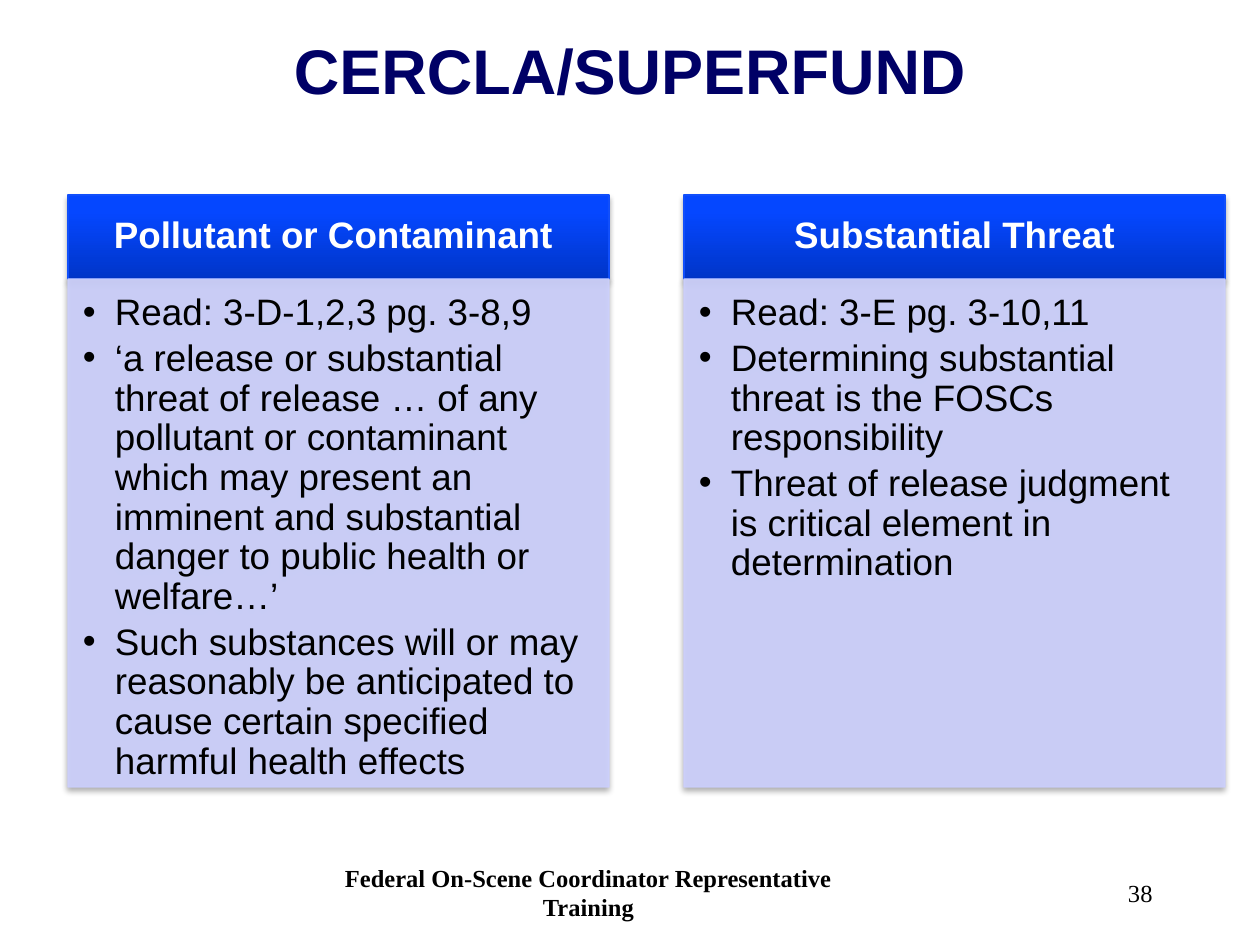
from copy import deepcopy
from dataclasses import dataclass
from typing import Any

from lxml.etree import SubElement
from pptx import Presentation
from pptx.dml.color import RGBColor
from pptx.enum.shapes import MSO_SHAPE
from pptx.enum.text import MSO_ANCHOR, PP_ALIGN
from pptx.oxml.ns import qn
from pptx.util import Emu, Pt

DPI = 126
TOP, WIDE, HEAD, BODY = 195, 541, 84, 508


@dataclass
class Box:
    left: int
    top: int
    width: int
    height: int


@dataclass
class Panel:
    left: int
    head: str
    points: list[str]


PANELS = [
    Panel(68, "Pollutant or Contaminant ", [
        "Read: 3-D-1,2,3 pg. 3-8,9",
        "‘a release or substantial threat of release … of any pollutant or "
        "contaminant which may present an imminent and substantial danger "
        "to public health or welfare…’",
        "Such substances will or may reasonably be anticipated to cause "
        "certain specified harmful health effects",
    ]),
    Panel(684, "Substantial Threat", [
        "Read: 3-E pg. 3-10,11",
        "Determining substantial threat is the FOSCs responsibility",
        "Threat of release judgment is critical element in determination",
    ]),
]


def px(count: int) -> Emu:
    """Turn pixels into EMU."""
    return Emu(round(count * 914400 / DPI))


def rgb(code: str) -> RGBColor:
    """Turn a hex string into a colour."""
    return RGBColor.from_string(code)


def area(box: Box) -> tuple[Emu, Emu, Emu, Emu]:
    """Give a box's place and size in EMU."""
    return px(box.left), px(box.top), px(box.width), px(box.height)


def style(para: Any, size: int, color: str, bold: bool = False,
          face: str = "Arial", align: PP_ALIGN = PP_ALIGN.CENTER) -> None:
    """Format a paragraph and its runs."""
    para.alignment = align
    for run in para.runs:
        font = run.font
        font.name, font.size, font.bold = face, Pt(size), bold
        font.color.rgb = rgb(color)


def inset(frame: Any, left: int, top: int, right: int, base: int) -> None:
    """Set the margins of a text frame."""
    frame.margin_left, frame.margin_top = px(left), px(top)
    frame.margin_right, frame.margin_bottom = px(right), px(base)


def shade(shape: Any) -> None:
    """Give a shape a soft shadow below it."""
    shape.shadow.inherit = False
    effect = shape._element.spPr.find(qn("a:effectLst"))
    outer = SubElement(effect, qn("a:outerShdw"), blurRad=str(Pt(3.1)),
                       dist=str(Pt(1.8)), dir="5400000", rotWithShape="0")
    tint = SubElement(outer, qn("a:srgbClr"), val="000000")
    SubElement(tint, qn("a:alpha"), val="35000")


def block(slide: Any, box: Box, edge: str) -> Any:
    """Draw a shadowed rectangle with a thin edge."""
    shape = slide.shapes.add_shape(MSO_SHAPE.RECTANGLE, *area(box))
    shape.line.color.rgb = rgb(edge)
    shape.line.width = Pt(0.75)
    shade(shape)
    shape.text_frame.word_wrap = True
    return shape


def draw_head(slide: Any, panel: Panel) -> None:
    """Draw the heading bar of a panel."""
    shape = block(slide, Box(panel.left, TOP, WIDE, HEAD), "114FFB")
    shape.fill.gradient()
    shape.fill.gradient_angle = 90
    stops = shape._element.spPr.find(qn("a:gradFill")).find(qn("a:gsLst"))
    stops.append(deepcopy(stops[-1]))
    tints = [(0, "0035C8"), (0.8, "0547FF"), (1, "0648FF")]
    for stop, (place, color) in zip(shape.fill.gradient_stops, tints):
        stop.position = place
        stop.color.rgb = rgb(color)
    frame = shape.text_frame
    frame.text = panel.head
    frame.vertical_anchor = MSO_ANCHOR.MIDDLE
    inset(frame, 20, 11, 20, 11)
    frame.paragraphs[0].line_spacing = 0.9
    style(frame.paragraphs[0], 21, "FFFFFF", True)


def draw_body(slide: Any, panel: Panel) -> None:
    """Draw the bullet list of a panel."""
    shape = block(slide, Box(panel.left, TOP + HEAD, WIDE, BODY), "CCD0FD")
    shape.fill.solid()
    shape.fill.fore_color.rgb = rgb("CCD0FD")
    for tint in shape._element.spPr.findall(".//" + qn("a:solidFill")):
        SubElement(tint[0], qn("a:alpha"), val="90000")
    frame = shape.text_frame
    frame.text = "\n".join(panel.points)
    frame.vertical_anchor = MSO_ANCHOR.TOP
    inset(frame, 15, 15, 20, 23)
    for para in frame.paragraphs:
        props = para._p.get_or_add_pPr()
        props.set("marL", str(px(32)))
        props.set("indent", str(-px(32)))
        SubElement(props, qn("a:buFont"), typeface="Arial")
        SubElement(props, qn("a:buChar"), char="•")
        para.line_spacing = 0.9
        para.space_after = Pt(3.4)
        style(para, 21, "000000", align=PP_ALIGN.LEFT)


def label(slide: Any, box: Box, text: str, bold: bool,
          align: PP_ALIGN) -> None:
    """Write a line at the foot of the slide."""
    frame = slide.shapes.add_textbox(*area(box)).text_frame
    frame.text = text
    frame.word_wrap = False
    frame.vertical_anchor = MSO_ANCHOR.MIDDLE
    style(frame.paragraphs[0], 14, "000000", bold, "Times New Roman", align)


def draw_title(slide: Any, text: str) -> None:
    """Place and format the title."""
    title = slide.shapes.title
    title.left, title.top, title.width, title.height = area(
        Box(34, 19, 1192, 101))
    title.text_frame.text = text
    title.text_frame.vertical_anchor = MSO_ANCHOR.MIDDLE
    style(title.text_frame.paragraphs[0], 36, "000066", True)


def main() -> None:
    """Build and save the slide."""
    deck = Presentation()
    deck.slide_width, deck.slide_height = px(1260), px(945)
    slide = deck.slides.add_slide(deck.slide_layouts[5])
    draw_title(slide, "CERCLA/SUPERFUND")
    for panel in PANELS:
        draw_head(slide, panel)
        draw_body(slide, panel)
    label(slide, Box(903, 861, 262, 63), "38", False, PP_ALIGN.RIGHT)
    label(slide, Box(305, 861, 567, 63),
          "Federal On-Scene Coordinator Representative Training",
          True, PP_ALIGN.CENTER)
    deck.save("out.pptx")


if __name__ == "__main__":
    main()
